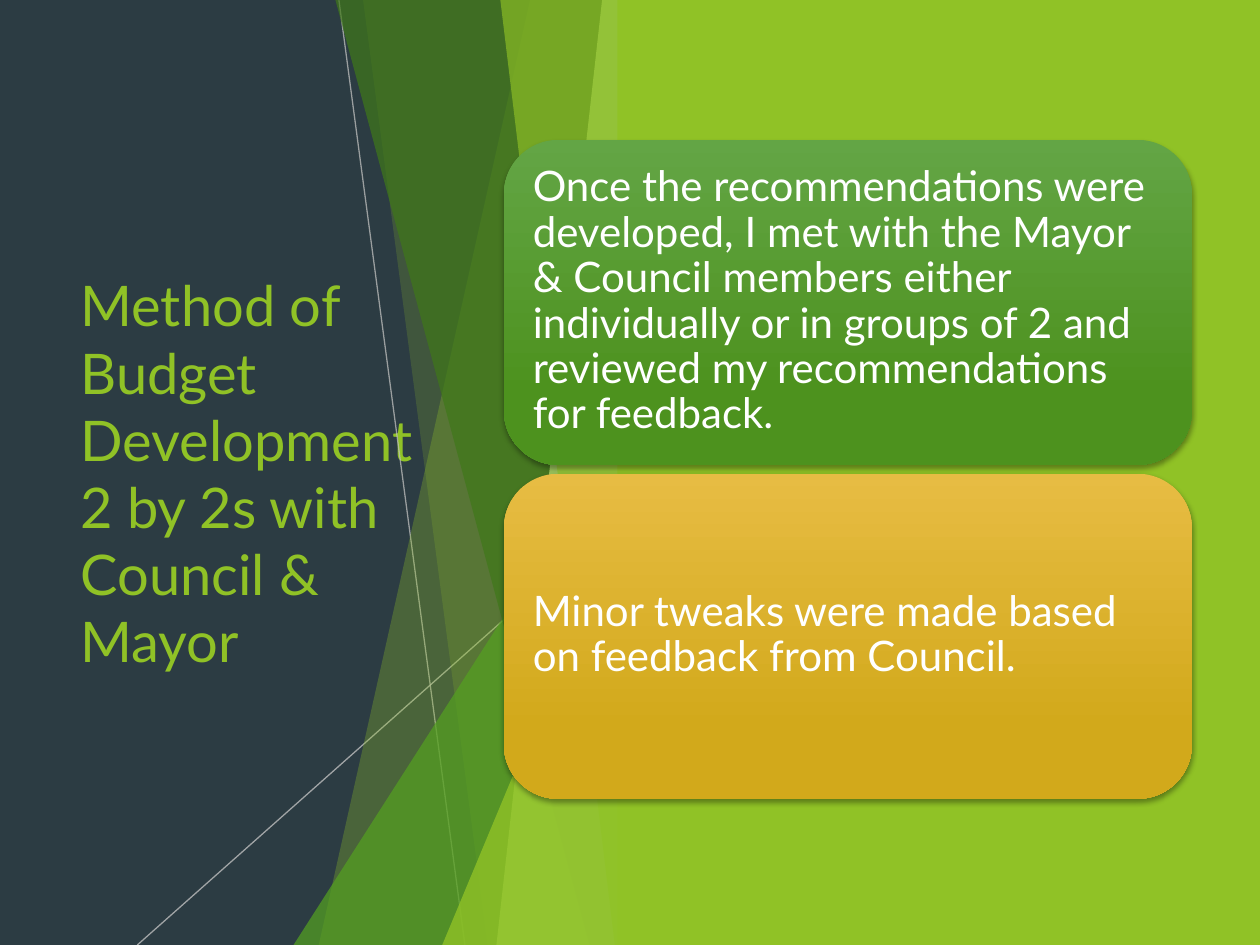
from pptx import Presentation
from pptx.dml.color import RGBColor
from pptx.enum.shapes import MSO_CONNECTOR, MSO_SHAPE
from pptx.enum.text import MSO_ANCHOR
from pptx.oxml.ns import qn
from pptx.util import Emu, Pt
from lxml import etree

RECTANGLE = MSO_SHAPE.RECTANGLE
ROUNDED = MSO_SHAPE.ROUNDED_RECTANGLE
TRIANGLE = MSO_SHAPE.ISOSCELES_TRIANGLE
STRAIGHT = MSO_CONNECTOR.STRAIGHT
MIDDLE = MSO_ANCHOR.MIDDLE

PX = 9144  # 100 px to the inch
WIDTH, HEIGHT = 1000, 750
FACET_EDGE = 500
FONT = "Lato"

SLATE = RGBColor(0x2C, 0x3C, 0x43)
LIME = RGBColor(0x90, 0xC2, 0x26)
GREEN = RGBColor(0x54, 0xA0, 0x21)
DARK_GREEN = RGBColor(0x3F, 0x78, 0x19)
PALE_LIME = RGBColor(0xC0, 0xE4, 0x74)
GRAY = RGBColor(0xBF, 0xBF, 0xBF)
WHITE = RGBColor(0xFF, 0xFF, 0xFF)
CARD_GREEN = (RGBColor(0x63, 0xA5, 0x45), RGBColor(0x4D, 0x92, 0x1E))
CARD_GOLD = (RGBColor(0xE7, 0xBC, 0x43), RGBColor(0xD2, 0xA9, 0x1B))


def box(*lengths):
    return [Emu(length * PX) for length in lengths]


def set_opacity(element, percent):
    color = next(element.iter(qn("a:srgbClr")))
    etree.SubElement(color, qn("a:alpha")).set("val", str(percent * 1000))


presentation = Presentation()
presentation.slide_width, presentation.slide_height = box(WIDTH, HEIGHT)
slide = presentation.slides.add_slide(presentation.slide_layouts[6])
shapes = slide.shapes
slide.background.fill.solid()
slide.background.fill.fore_color.rgb = SLATE

backdrop = shapes.add_shape(RECTANGLE, *box(0, 0, WIDTH, HEIGHT))
backdrop.shadow.inherit = False
backdrop.fill.solid()
backdrop.fill.fore_color.rgb = SLATE
backdrop.line.fill.background()

# Title
title = shapes.add_textbox(*box(54, 151, 291, 448))
title.text_frame.word_wrap = True
title.text_frame.vertical_anchor = MIDDLE
paragraph = title.text_frame.paragraphs[0]
for index, text in enumerate(
    ["Method of Budget Development", "2 by 2s with Council & Mayor"]
):
    if index:
        paragraph.add_line_break()
    run = paragraph.add_run()
    run.text = text
    run.font.name = FONT
    run.font.size = Pt(32)
    run.font.color.rgb = LIME

# Thin rays
for ends, opacity in [((269, 0, 369, 750), 75), ((500, 403, 109, 750), 80)]:
    ray = shapes.add_connector(STRAIGHT, *box(*ends))
    ray.line.width = Pt(0.75)
    ray.line.color.rgb = GRAY
    set_opacity(ray._element, opacity)
    etree.SubElement(ray._element.spPr, qn("a:effectLst"))

# Translucent facets: top, x at the top, x at the bottom, colour, opacity.
# A facet whose top lies on the right edge is a triangle.
facets = [
    (-1, 421, 253, LIME, 30),
    (-1, 288, 387, LIME, 20),
    (333, FACET_EDGE, 233, GREEN, 72),
    (-1, 266, 468, DARK_GREEN, 70),
    (-1, 478, 394, PALE_LIME, 70),
    (-1, 397, 488, LIME, 65),
    (393, FACET_EDGE, 351, LIME, 80),
]
for top, top_x, bottom_x, color, opacity in facets:
    if top_x == FACET_EDGE:
        facet = shapes.add_shape(
            TRIANGLE, *box(bottom_x, top, FACET_EDGE - bottom_x, HEIGHT - top)
        )
        facet.adjustments[0] = 1
    else:
        builder = shapes.build_freeform(top_x, top, scale=PX)
        builder.add_line_segments(
            [(FACET_EDGE, top), (FACET_EDGE, HEIGHT), (bottom_x, HEIGHT)]
        )
        facet = builder.convert_to_shape()
    facet.shadow.inherit = False
    facet.fill.solid()
    facet.fill.fore_color.rgb = color
    set_opacity(facet._element, opacity)
    facet.line.fill.background()

panel = shapes.add_shape(RECTANGLE, *box(490, 0, 510, HEIGHT))
panel.shadow.inherit = False
panel.fill.solid()
panel.fill.fore_color.rgb = LIME
panel.line.fill.background()

# Cards
cards = [
    (111, CARD_GREEN,
     "Once the recommendations were developed, I met with the Mayor & Council "
     "members either individually or in groups of 2 and reviewed my "
     "recommendations for feedback."),
    (376, CARD_GOLD, "Minor tweaks were made based on feedback from Council."),
]
for top, colors, text in cards:
    card = shapes.add_shape(ROUNDED, *box(400, top, 546, 258))
    card.fill.gradient()
    card.fill.gradient_angle = 270
    for stop, position, color in zip(card.fill.gradient_stops, (0, 0.78), colors):
        stop.position = position
        stop.color.rgb = color
    card.line.fill.background()
    card.shadow.inherit = False
    effects = card._element.spPr.find(qn("a:effectLst"))
    shadow = etree.SubElement(
        effects, qn("a:outerShdw"), blurRad=str(Pt(3)), dist=str(Pt(2)),
        dir="5400000", rotWithShape="0",
    )
    etree.SubElement(shadow, qn("a:srgbClr"), val="000000")
    set_opacity(shadow, 35)

    label = shapes.add_textbox(*box(413, top + 12, 521, 233))
    frame = label.text_frame
    frame.word_wrap = True
    frame.vertical_anchor = MIDDLE
    frame.margin_left, frame.margin_top, frame.margin_right, frame.margin_bottom = box(
        10, 10, 10, 10
    )
    paragraph = frame.paragraphs[0]
    paragraph.line_spacing = 0.9
    run = paragraph.add_run()
    run.text = text
    run.font.name = FONT
    run.font.size = Pt(24)
    run.font.color.rgb = WHITE

presentation.save("out.pptx")
